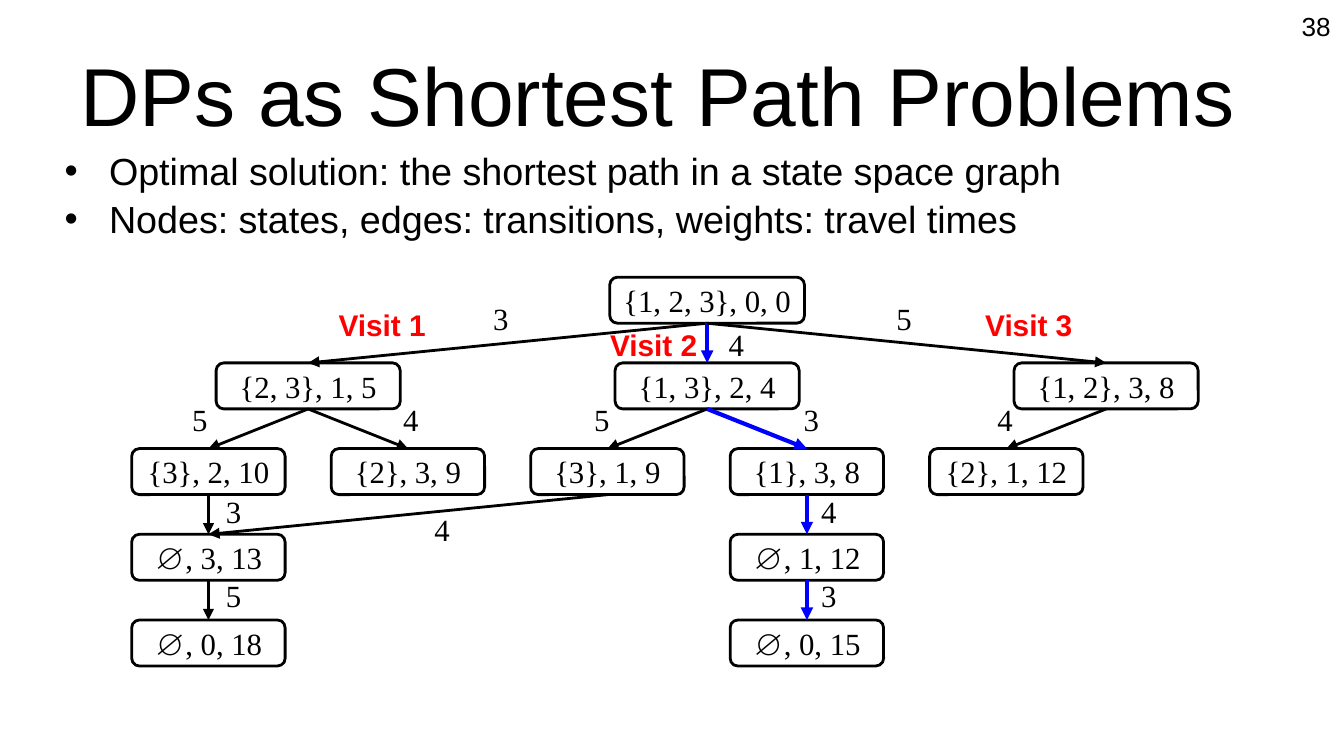
from lxml.etree import SubElement
from pptx import Presentation
from pptx.dml.color import RGBColor
from pptx.enum.shapes import MSO_CONNECTOR as Link, MSO_SHAPE as Kind
from pptx.enum.text import MSO_ANCHOR as Anchor, MSO_AUTO_SIZE as Fit, PP_ALIGN as Align
from pptx.oxml.ns import qn
from pptx.util import Cm, Pt

TITLE = "DPs as Shortest Path Problems"
POINTS = [
    "Optimal solution: the shortest path in a state space graph",
    "Nodes: states, edges: transitions, weights: travel times",
]
# (column, row): state
NODES = {
    (2.5, 0): "{1, 2, 3}, 0, 0",
    (0.5, 1): "{2, 3}, 1, 5",
    (2.5, 1): "{1, 3}, 2, 4",
    (4.5, 1): "{1, 2}, 3, 8",
    (0, 2): "{3}, 2, 10",
    (1, 2): "{2}, 3, 9",
    (2, 2): "{3}, 1, 9",
    (3, 2): "{1}, 3, 8",
    (4, 2): "{2}, 1, 12",
    (0, 3): "∅, 3, 13",
    (3, 3): "∅, 1, 12",
    (0, 4): "∅, 0, 18",
    (3, 4): "∅, 0, 15",
}
# from, to, weight, place of the weight, on the shortest path
EDGES = [
    ((2.5, 0), (0.5, 1), "3", (9.14, 5.49), False),
    ((2.5, 0), (2.5, 1), "4", (13.59, 5.97), True),
    ((2.5, 0), (4.5, 1), "5", (16.76, 5.49), False),
    ((0.5, 1), (0, 2), "5", (3.45, 7.39), False),
    ((0.5, 1), (1, 2), "4", (7.44, 7.39), False),
    ((2.5, 1), (2, 2), "5", (11.05, 7.39), False),
    ((2.5, 1), (3, 2), "3", (15.01, 7.39), True),
    ((4.5, 1), (4, 2), "4", (18.67, 7.39), False),
    ((0, 2), (0, 3), "3", (4.09, 9.14), False),
    ((2, 2), (0, 3), "4", (8.03, 9.47), False),
    ((3, 2), (3, 3), "4", (15.34, 9.14), True),
    ((0, 3), (0, 4), "5", (4.09, 10.72), False),
    ((3, 3), (3, 4), "3", (15.34, 10.72), True),
]
VISITS = [("Visit 1", (6.22, 5.61)), ("Visit 2", (11.35, 5.99)), ("Visit 3", (18.44, 5.61))]

LEFT, TOP = 3.94, 5.24  # centre of first column, top of first row
COL, ROW, TALL = 3.77, 1.62, 0.87
WIDE = [3.68, 3.48, 2.9, 2.9, 2.9]  # node width by row
BOTTOM_SITE, TOP_SITE = 2, 0


def color(code):
    return RGBColor.from_string(code)


def style(par, size, face="Arial", code="000000", bold=False, align=Align.LEFT):
    par.alignment = align
    font = par.font
    font.size, font.name, font.bold = Pt(size), face, bold
    font.color.rgb = color(code)


def frame(shape, pad, anchor=Anchor.TOP):
    """Set the insets, wrapping and anchor of a shape's text."""
    text = shape.text_frame
    text.margin_left = text.margin_right = text.margin_top = text.margin_bottom = Cm(pad)
    text.word_wrap, text.auto_size = True, Fit.NONE
    text.vertical_anchor = anchor
    return text


def place(shape, *box):
    shape.left, shape.top, shape.width, shape.height = map(Cm, box)


def label(text, spot, wide, *look):
    box = slide.shapes.add_textbox(*map(Cm, (*spot, wide, 1.08)))
    body = frame(box, 0.18)
    body.text = text
    style(body.paragraphs[0], *look)


def node(col, row, text):
    wide = WIDE[row]
    box = slide.shapes.add_shape(
        Kind.ROUNDED_RECTANGLE,
        *map(Cm, (LEFT + col * COL - wide / 2, TOP + row * ROW, wide, TALL)))
    box.shadow.inherit = False
    box.fill.background()
    box.line.color.rgb, box.line.width = color("000000"), Pt(1.5)
    body = frame(box, 0.18, Anchor.MIDDLE)
    body.text = text
    style(body.paragraphs[0], 16.5, "Times New Roman", align=Align.CENTER)
    return box


def arrow(start, end, best):
    link = slide.shapes.add_connector(Link.STRAIGHT, 0, 0, 0, 0)
    link.begin_connect(start, BOTTOM_SITE)
    link.end_connect(end, TOP_SITE)
    link.line.color.rgb = color("0000FF" if best else "000000")
    link.line.width = Pt(2.25 if best else 1.5)
    props = link.element.spPr
    SubElement(props.find(qn("a:ln")), qn("a:tailEnd"), type="triangle")
    SubElement(props, qn("a:effectLst"))


deck = Presentation()
deck.slide_width, deck.slide_height = Cm(25.4), Cm(14.29)
slide = deck.slides.add_slide(deck.slide_layouts[1])

title, points = slide.placeholders
place(title, 1.27, 0.58, 22.86, 2.39)
head = frame(title, 0.25, Anchor.MIDDLE)
head.text = TITLE
style(head.paragraphs[0], 44)

place(points, 0.84, 2.55, 21.84, 2.4)
body = frame(points, 0.25)
body.text = "\n".join(POINTS)
for i, par in enumerate(body.paragraphs):
    props = par._p.get_or_add_pPr()
    props.set("marL", str(Cm(0.97)))
    props.set("indent", str(Cm(-0.84)))
    par.space_before = Pt(1.5 if i else 0)
    style(par, 20.2)

number = slide.shapes.add_textbox(*map(Cm, (23.7, 0, 1.7, 0.99)))
page = frame(number, 0.25, Anchor.MIDDLE)
page.text = "38"
style(page.paragraphs[0], 14, align=Align.RIGHT)

boxes = {spot: node(*spot, text) for spot, text in NODES.items()}
for start, end, weight, spot, best in EDGES:
    arrow(boxes[start], boxes[end], best)
    label(weight, spot, 0.69, 16.5, "Times New Roman")
for text, spot in VISITS:
    label(text, spot, 2.26, 16, "Arial", "FF0000", True)

deck.save("out.pptx")
